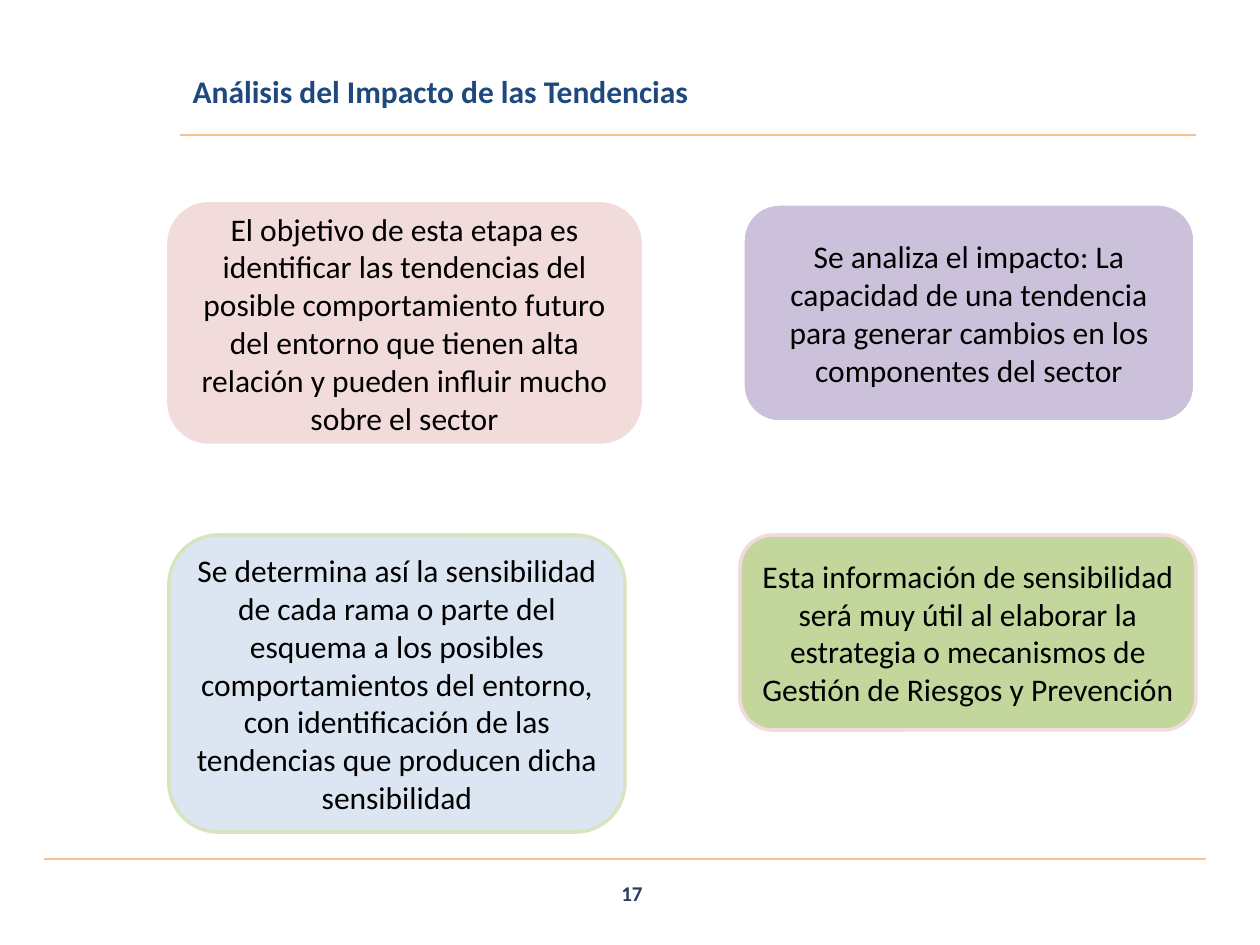
from dataclasses import dataclass

from pptx import Presentation
from pptx.dml.color import RGBColor
from pptx.enum.shapes import MSO_CONNECTOR, MSO_SHAPE
from pptx.enum.text import MSO_ANCHOR, MSO_AUTO_SIZE, PP_ALIGN
from pptx.oxml.ns import qn
from pptx.util import Emu, Pt

ROUND = MSO_SHAPE.ROUNDED_RECTANGLE
STRAIGHT = MSO_CONNECTOR.STRAIGHT
MIDDLE = MSO_ANCHOR.MIDDLE
FIXED = MSO_AUTO_SIZE.NONE
LEFT, CENTER = PP_ALIGN.LEFT, PP_ALIGN.CENTER
SCALE = 914400 / 126


@dataclass(frozen=True)
class Theme:
    font: str = "Calibri"
    title: str = "1F497D"
    number: str = "254061"
    text: str = "000000"
    rule: str = "FAC090"
    rose: str = "F2DCDB"
    violet: str = "CCC1DA"
    blue: str = "DCE6F2"
    green: str = "C3D69B"
    lime: str = "D7E4BD"
    white: str = "FFFFFF"
    large: int = 18
    small: int = 12
    thin: float = 1.25
    edge: int = 2


THEME = Theme()

CARDS = [
    ((743, 204, 452, 218), THEME.violet, THEME.white,
     "Se analiza el impacto: La capacidad de una tendencia para generar "
     "cambios en los componentes del sector"),
    ((169, 535, 456, 297), THEME.blue, THEME.lime,
     "Se determina así la sensibilidad de cada rama o parte del esquema a "
     "los posibles comportamientos del entorno, con identificación de las "
     "tendencias que producen dicha sensibilidad"),
    ((740, 535, 456, 195), THEME.green, THEME.rose,
     "Esta información de sensibilidad será muy útil al elaborar la "
     "estrategia o mecanismos de Gestión de Riesgos y Prevención"),
    ((169, 204, 471, 238), THEME.rose, THEME.rose,
     "El objetivo de esta etapa es identificar las tendencias del posible "
     "comportamiento futuro del entorno que tienen alta relación y pueden "
     "influir mucho sobre el sector"),
]


def px(value):
    return Emu(round(value * SCALE))


def color(code):
    return RGBColor.from_string(code)


def write(shape, text, size, tone, bold=False, align=CENTER):
    frame = shape.text_frame
    frame.text = text
    frame.word_wrap = True
    frame.auto_size = FIXED
    frame.vertical_anchor = MIDDLE
    para = frame.paragraphs[0]
    para.alignment = align
    font = para.font
    font.name = THEME.font
    font.size = Pt(size)
    font.bold = bold
    font.color.rgb = color(tone)


def add_title(slide, text):
    title = slide.shapes.title
    title.left, title.top, title.width, title.height = map(px, (180, 66, 619, 50))
    write(title, text, THEME.large, THEME.title, True, LEFT)


def add_rule(slide, left, right, y):
    rule = slide.shapes.add_connector(STRAIGHT, px(left), px(y), px(right), px(y))
    rule.line.color.rgb = color(THEME.rule)
    rule.line.width = Pt(THEME.thin)
    props = rule.element.spPr
    props.append(props.makeelement(qn("a:effectLst"), {}))


def add_card(slide, box, fill, edge, text):
    card = slide.shapes.add_shape(ROUND, *map(px, box))
    card.shadow.inherit = False
    card.fill.solid()
    card.fill.fore_color.rgb = color(fill)
    card.line.color.rgb = color(edge)
    card.line.width = Pt(THEME.edge)
    write(card, text, THEME.large, THEME.text)


def add_number(slide, text):
    box = slide.shapes.add_textbox(*map(px, (485, 868, 294, 50)))
    write(box, text, THEME.small, THEME.number, True)


def main():
    deck = Presentation()
    deck.slide_width, deck.slide_height = px(1260), px(945)
    slide = deck.slides.add_slide(deck.slide_layouts[5])
    add_title(slide, "Análisis del Impacto de las Tendencias")
    add_rule(slide, 180, 1196, 135)
    add_rule(slide, 44, 1206, 859)
    add_number(slide, "17")
    for card in CARDS:
        add_card(slide, *card)
    deck.save("out.pptx")


if __name__ == "__main__":
    main()
